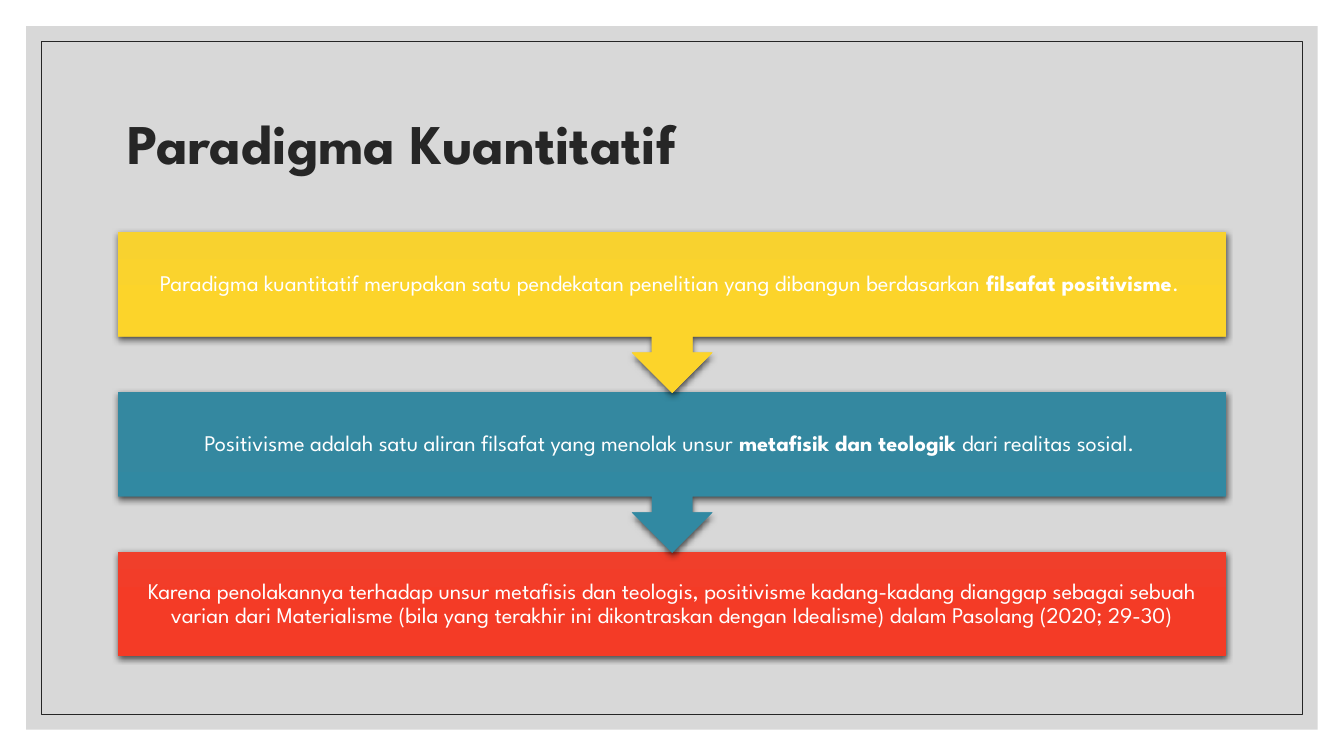
from copy import deepcopy

from lxml import etree
from pptx import Presentation
from pptx.dml.color import RGBColor
from pptx.enum.shapes import MSO_SHAPE
from pptx.enum.text import MSO_ANCHOR, PP_ALIGN
from pptx.oxml.ns import qn
from pptx.util import Cm, Pt

RECTANGLE = MSO_SHAPE.RECTANGLE
ARROW_CALLOUT = MSO_SHAPE.DOWN_ARROW_CALLOUT
MIDDLE = MSO_ANCHOR.MIDDLE
LEFT, CENTER = PP_ALIGN.LEFT, PP_ALIGN.CENTER

# Content: each step is a list of (text, bold) and the colours of its gradient
TITLE = [("Paradigma Kuantitatif", True)]
STEPS = [
    ([("Paradigma kuantitatif merupakan satu pendekatan penelitian yang dibangun "
       "berdasarkan ", False),
      ("filsafat positivisme", True),
      (". ", False)],
     ("F8D22F", "FCD42A", "FBD32A")),
    ([("Positivisme adalah satu aliran filsafat yang menolak unsur ", False),
      ("metafisik dan teologik ", True),
      ("dari realitas sosial. ", False)],
     ("3488A0", "3189A2", "3188A1")),
    ([("Karena penolakannya terhadap unsur metafisis dan teologis, positivisme "
       "kadang-kadang dianggap sebagai sebuah varian dari Materialisme (bila yang "
       "terakhir ini dikontraskan dengan Idealisme) dalam Pasolang (2020; 29-30)", False)],
     ("F03F2B", "F43B26", "F33B26")),
]

THEME = {
    "font": "League Spartan",
    "panel": "BFBFBF", "panel_alpha": 60,
    "ink": "262626", "step_text": "FFFFFF", "shadow": "000000",
    "title_size": 40, "step_size": 16, "frame_width": 0.5,
}

# Layout in cm
SLIDE_W, SLIDE_H = 33.87, 19.05
PANEL_MARGIN, FRAME_MARGIN = 0.66, 1.04
CONTENT_LEFT, CONTENT_W = 2.97, 27.94
TITLE_TOP, TITLE_H = 1.78, 3.81
STEP_TOP, STEP_PITCH = 5.84, 4.03
BOX_H, CALLOUT_H = 2.64, 4.06
STEP_INSET = 0.3


def color(name):
    return RGBColor.from_string(name)


def add_inset_rectangle(slide, margin):
    rectangle = slide.shapes.add_shape(
        RECTANGLE, Cm(margin), Cm(margin),
        Cm(SLIDE_W - 2 * margin), Cm(SLIDE_H - 2 * margin))
    rectangle.shadow.inherit = False
    return rectangle


def write(shape, runs, size, ink, align, **frame_format):
    frame = shape.text_frame
    frame_format = {"word_wrap": True, "vertical_anchor": MIDDLE, **frame_format}
    for name, value in frame_format.items():
        setattr(frame, name, value)
    paragraph = frame.paragraphs[0]
    paragraph.alignment = align
    paragraph.line_spacing = 0.9
    for text, bold in runs:
        run = paragraph.add_run()
        run.text = text
        run_format = {"name": THEME["font"], "size": Pt(size), "bold": bold}
        for name, value in run_format.items():
            setattr(run.font, name, value)
        run.font.color.rgb = color(ink)


def fill_gradient(shape, colors):
    shape.fill.gradient()
    shape.fill.gradient_angle = 270
    stop_list = shape._element.spPr.find(".//" + qn("a:gsLst"))
    stop_list.append(deepcopy(stop_list[-1]))
    for index, (stop, name) in enumerate(zip(shape.fill.gradient_stops, colors)):
        stop.position = index / (len(colors) - 1)
        stop.color.rgb = color(name)


def set_alpha(color_element, percent):
    etree.SubElement(color_element, qn("a:alpha"), val=str(percent * 1000))


def cast_shadow(shape):
    shape.shadow.inherit = False
    effects = shape._element.spPr.find(qn("a:effectLst"))
    shadow = etree.SubElement(
        effects, qn("a:outerShdw"), blurRad=str(Pt(4.5)), dist=str(Pt(1.5)),
        dir="5400000", algn="ctr", rotWithShape="0")
    set_alpha(etree.SubElement(shadow, qn("a:srgbClr"), val=THEME["shadow"]), 63)


def add_step(slide, index):
    runs, colors = STEPS[index]
    is_last = index == len(STEPS) - 1
    step = slide.shapes.add_shape(
        RECTANGLE if is_last else ARROW_CALLOUT,
        Cm(CONTENT_LEFT), Cm(STEP_TOP + index * STEP_PITCH),
        Cm(CONTENT_W), Cm(BOX_H if is_last else CALLOUT_H))
    if not is_last:
        step.adjustments[3] = BOX_H / CALLOUT_H
    fill_gradient(step, colors)
    step.line.fill.background()
    cast_shadow(step)
    sides = ("left", "top", "right", "bottom")
    insets = {f"margin_{side}": Cm(STEP_INSET) for side in sides}
    write(step, runs, THEME["step_size"], THEME["step_text"], CENTER, **insets)


def main():
    presentation = Presentation()
    presentation.slide_width, presentation.slide_height = Cm(SLIDE_W), Cm(SLIDE_H)
    slide = presentation.slides.add_slide(presentation.slide_layouts[6])

    # Translucent panel and thin frame
    panel = add_inset_rectangle(slide, PANEL_MARGIN)
    panel.fill.solid()
    panel.fill.fore_color.rgb = color(THEME["panel"])
    set_alpha(panel._element.spPr.find(".//" + qn("a:srgbClr")), THEME["panel_alpha"])
    panel.line.fill.background()

    frame = add_inset_rectangle(slide, FRAME_MARGIN)
    frame.fill.background()
    frame.line.color.rgb = color(THEME["ink"])
    frame.line.width = Pt(THEME["frame_width"])

    # Title
    title = slide.shapes.add_textbox(
        Cm(CONTENT_LEFT), Cm(TITLE_TOP), Cm(CONTENT_W), Cm(TITLE_H))
    write(title, TITLE, THEME["title_size"], THEME["ink"], LEFT)

    # Steps from the bottom up, so each arrow tip lies over the next box
    for index in reversed(range(len(STEPS))):
        add_step(slide, index)

    presentation.save("out.pptx")


if __name__ == "__main__":
    main()
